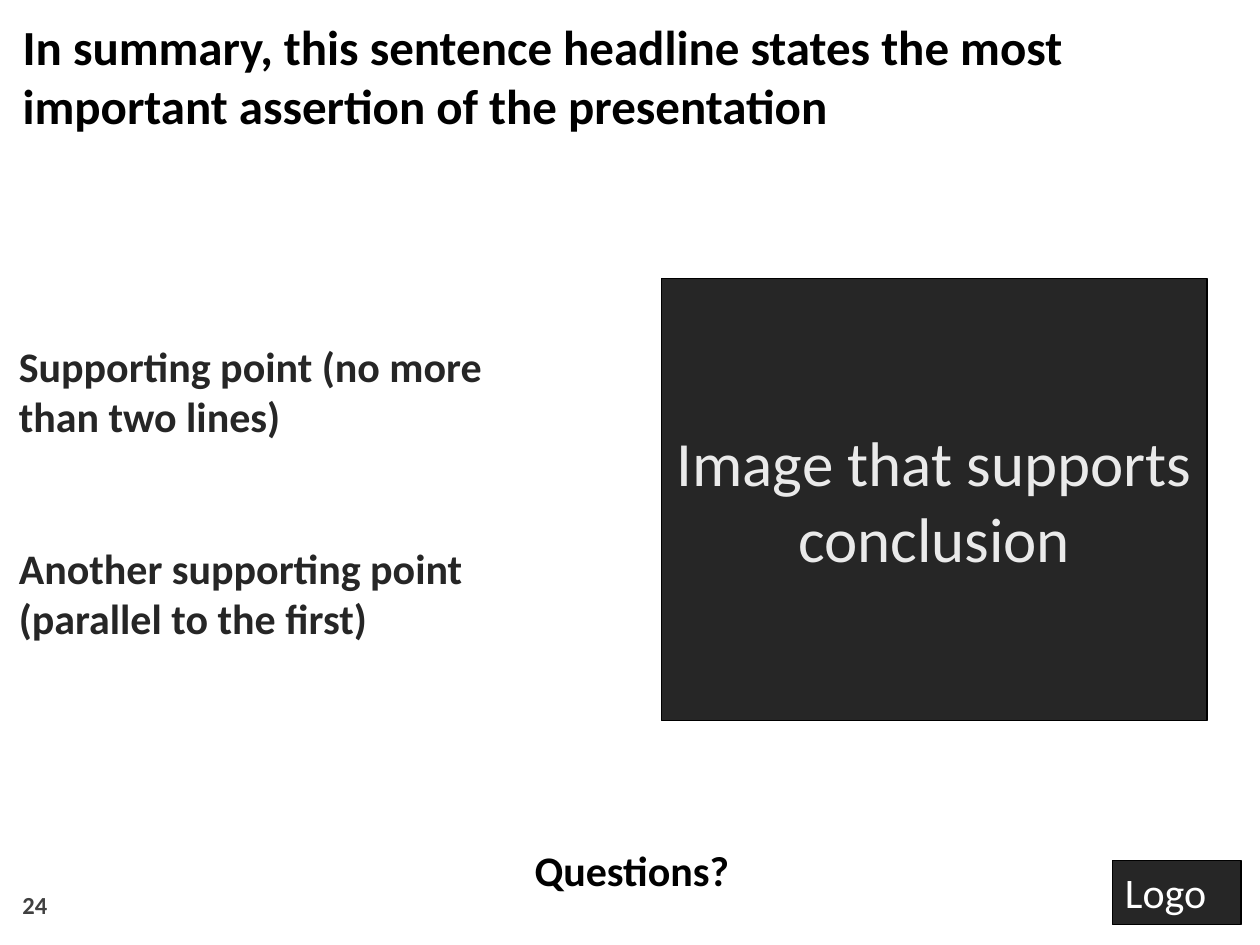
from dataclasses import dataclass

from pptx import Presentation
from pptx.dml.color import RGBColor
from pptx.enum.shapes import MSO_SHAPE
from pptx.enum.text import MSO_ANCHOR, MSO_AUTO_SIZE, PP_ALIGN
from pptx.util import Inches, Pt

RECT = MSO_SHAPE.RECTANGLE
TOP, MIDDLE, BOTTOM = MSO_ANCHOR.TOP, MSO_ANCHOR.MIDDLE, MSO_ANCHOR.BOTTOM
LEFT, CENTER = PP_ALIGN.LEFT, PP_ALIGN.CENTER
FIXED = MSO_AUTO_SIZE.NONE
TITLE_ONLY = 5


@dataclass(frozen=True)
class Theme:
    """Fonts, colours and type sizes of the slide."""
    font: str = "Calibri"
    black: str = "000000"
    white: str = "FFFFFF"
    dark: str = "262626"
    gray: str = "404040"
    pale: str = "EAEAEA"
    head: int = 28
    body: int = 24
    label: int = 36
    small: int = 14
    gap: int = 58
    line: float = 0.75


THEME = Theme()


def write(shape, lines, size, color, bold=True, align=LEFT, anchor=TOP,
          wrap=True, gap=0):
    """Fill a shape with one formatted paragraph per line."""
    frame = shape.text_frame
    frame.auto_size = FIXED
    frame.word_wrap = wrap
    frame.vertical_anchor = anchor
    for i, line in enumerate(lines):
        para = frame.add_paragraph() if i else frame.paragraphs[0]
        para.alignment = align
        para.space_before = Pt(gap if i else 0)
        run = para.add_run()
        run.text = line
        font = run.font
        font.name, font.size, font.bold = THEME.font, Pt(size), bold
        font.color.rgb = RGBColor.from_string(color)
    return frame


def add_text(slide, box, lines, size, color, **style):
    """Add a text box and return its text frame."""
    shape = slide.shapes.add_textbox(*map(Inches, box))
    return write(shape, lines, size, color, **style)


def add_panel(slide, box, label, size, color, **style):
    """Add a dark outlined panel with a label."""
    panel = slide.shapes.add_shape(RECT, *map(Inches, box))
    panel.shadow.inherit = False
    panel.fill.solid()
    panel.fill.fore_color.rgb = RGBColor.from_string(THEME.dark)
    panel.line.color.rgb = RGBColor.from_string(THEME.black)
    panel.line.width = Pt(THEME.line)
    write(panel, [label], size, color, bold=False, **style)


def add_title(slide, box, text):
    """Place and format the sentence headline."""
    title = slide.shapes.title
    title.left, title.top, title.width, title.height = map(Inches, box)
    write(title, [text], THEME.head, THEME.black)


def add_points(slide, box, points):
    """Add the supporting points, spaced apart."""
    frame = add_text(slide, box, points, THEME.body, THEME.dark,
                     gap=THEME.gap)
    frame.margin_left = frame.margin_right = Inches(0.07)
    frame.margin_top = frame.margin_bottom = Inches(0.03)


def add_footer(slide, box, number, prompt, mark):
    """Add the page number, closing prompt and logo panel."""
    left, top, width, height = box
    add_text(slide, (left, top + 0.3, 2.33, 0.4), [number],
             THEME.small, THEME.gray, anchor=BOTTOM)
    add_text(slide, (left + 4.05, top, 1.77, 0.51), [prompt],
             THEME.body, THEME.black, align=CENTER, wrap=False)
    add_panel(slide, (left + width - 1.02, top + height - 0.51, 1.02, 0.51),
              mark, THEME.body, THEME.white, wrap=False)


def main():
    """Build the summary slide and save it."""
    deck = Presentation()
    deck.slide_width, deck.slide_height = Inches(10), Inches(7.5)
    slide = deck.slides.add_slide(deck.slide_layouts[TITLE_ONLY])
    add_title(slide, (0.08, 0.08, 9.84, 1.03),
              "In summary, this sentence headline states the most "
              "important assertion of the presentation")
    add_points(slide, (0.08, 2.67, 4.17, 2.48),
               ["Supporting point (no more than two lines)",
                "Another supporting point (parallel to the first)"])
    add_panel(slide, (5.25, 2.21, 4.33, 3.51), "Image that supports conclusion",
              THEME.label, THEME.pale, align=CENTER, anchor=MIDDLE)
    add_footer(slide, (0.08, 6.65, 9.77, 0.69), "24", "Questions?", "Logo")
    deck.save("out.pptx")


if __name__ == "__main__":
    main()
